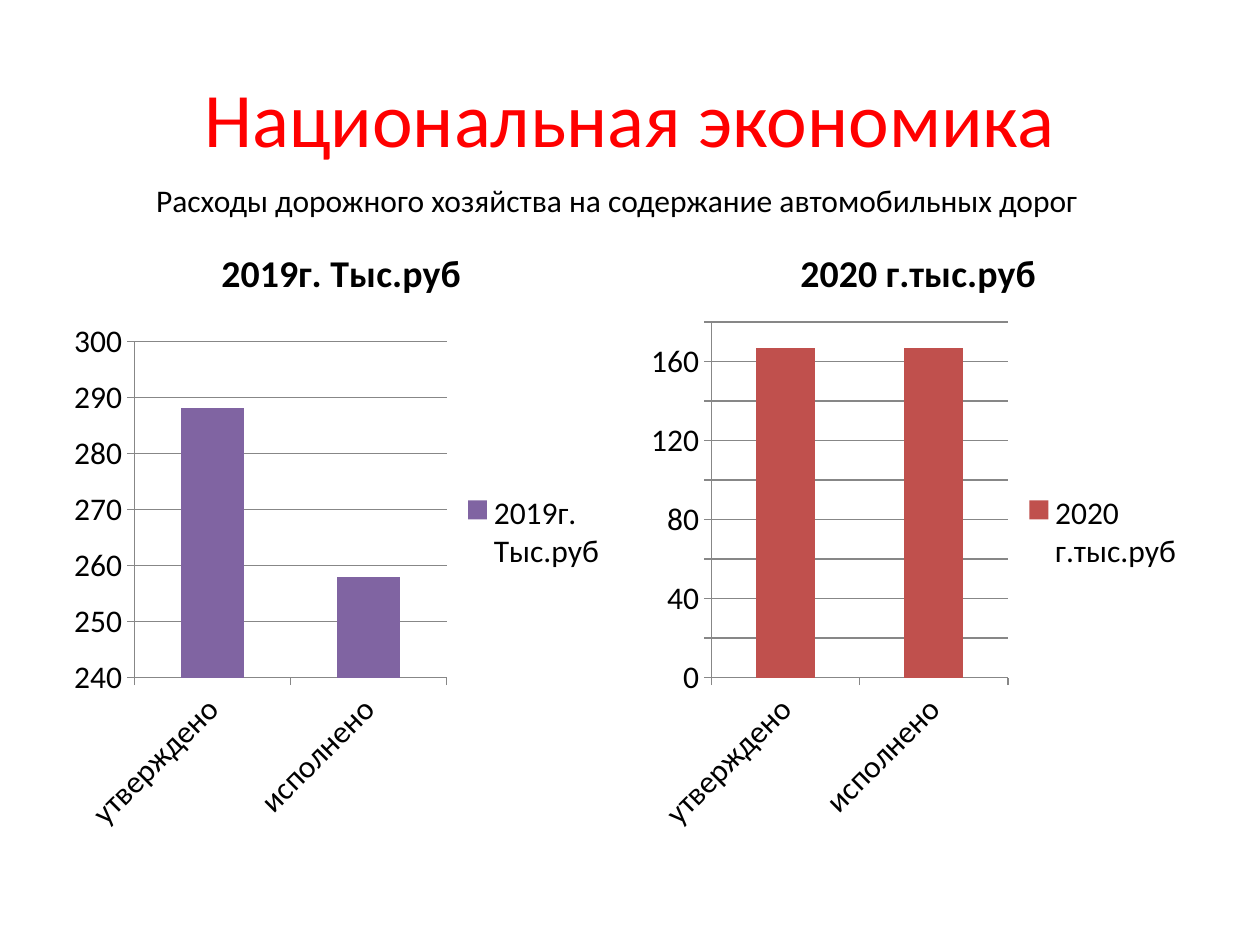
from dataclasses import dataclass

from pptx import Presentation
from pptx.chart.data import CategoryChartData
from pptx.dml.color import RGBColor
from pptx.enum.chart import XL_CHART_TYPE, XL_LEGEND_POSITION, XL_TICK_MARK
from pptx.enum.text import MSO_ANCHOR, MSO_AUTO_SIZE, PP_ALIGN
from pptx.util import Inches, Pt


@dataclass(frozen=True)
class Theme:
    font: str = "Calibri"
    title_size: float = 44
    body_size: float = 18
    chart_title_size: float = 21.6
    title_color: str = "FF0000"
    text_color: str = "000000"
    line_color: str = "878787"
    purple: str = "8064A2"
    red: str = "C0504D"


THEME = Theme()
CATEGORIES = ["утверждено", "исполнено"]
# Name, values, bar colour, then axis minimum, maximum and step
YEARS = [
    ("2019г. Тыс.руб", (288, 258), THEME.purple, (240, 300, 10)),
    ("2020 г.тыс.руб", (167, 167), THEME.red, (0, 180, 20)),
]


def place(shape, left, top, width, height):
    shape.left, shape.top = Inches(left), Inches(top)
    shape.width, shape.height = Inches(width), Inches(height)


def format_font(font, size, color, bold=False):
    font.name = THEME.font
    font.size = Pt(size)
    font.bold = bold
    font.color.rgb = RGBColor.from_string(color)


def write_text(text_frame, text, *, size=THEME.body_size, color=THEME.text_color,
               bold=False, align=PP_ALIGN.LEFT):
    paragraph = text_frame.paragraphs[0]
    paragraph.alignment = align
    run = paragraph.add_run()
    run.text = text
    format_font(run.font, size, color, bold)


def add_heading(slide, left, top, width, height):
    title = slide.shapes.title
    place(title, left, top, width, height)
    title.text_frame.vertical_anchor = MSO_ANCHOR.MIDDLE
    write_text(title.text_frame, "Национальная экономика", size=THEME.title_size,
               color=THEME.title_color, align=PP_ALIGN.CENTER)


def add_subtitle(slide, left, top, width, height):
    box = slide.shapes.add_textbox(Inches(left), Inches(top), Inches(width), Inches(height))
    box.text_frame.word_wrap = False
    box.text_frame.auto_size = MSO_AUTO_SIZE.SHAPE_TO_FIT_TEXT
    write_text(box.text_frame, "Расходы дорожного хозяйства на содержание автомобильных дорог")


def format_axis(axis):
    axis.major_tick_mark = XL_TICK_MARK.OUTSIDE
    axis.minor_tick_mark = XL_TICK_MARK.NONE
    axis.format.line.color.rgb = RGBColor.from_string(THEME.line_color)
    axis.format.line.width = Pt(0.75)


def add_year_chart(slide, left, top, width, height, name, values, color, scale):
    chart_data = CategoryChartData()
    chart_data.categories = CATEGORIES
    chart_data.add_series(name, values)
    chart = slide.shapes.add_chart(
        XL_CHART_TYPE.COLUMN_STACKED, Inches(left), Inches(top),
        Inches(width), Inches(height), chart_data).chart
    format_font(chart.font, THEME.body_size, THEME.text_color)

    chart.has_title = True
    write_text(chart.chart_title.text_frame, name, size=THEME.chart_title_size,
               bold=True, align=PP_ALIGN.CENTER)
    chart.chart_title.include_in_layout = False
    chart.has_legend = True
    chart.legend.position = XL_LEGEND_POSITION.RIGHT
    chart.legend.include_in_layout = False

    plot = chart.plots[0]
    plot.gap_width, plot.overlap = 150, 100
    plot.vary_by_categories = False
    fill = plot.series[0].format.fill
    fill.solid()
    fill.fore_color.rgb = RGBColor.from_string(color)

    format_axis(chart.category_axis)
    axis = chart.value_axis
    format_axis(axis)
    axis.minimum_scale, axis.maximum_scale, axis.major_unit = scale
    axis.has_major_gridlines = True
    gridline = axis.major_gridlines.format.line
    gridline.color.rgb = RGBColor.from_string(THEME.line_color)
    gridline.width = Pt(0.75)


def add_year_charts(slide, left, top, width, height, gap=0.16):
    chart_width = (width - gap * (len(YEARS) - 1)) / len(YEARS)
    for index, year in enumerate(YEARS):
        add_year_chart(slide, left + index * (chart_width + gap), top,
                       chart_width, height, *year)


def main():
    presentation = Presentation()
    presentation.slide_width, presentation.slide_height = Inches(10), Inches(7.5)
    slide = presentation.slides.add_slide(presentation.slide_layouts.get_by_name("Title Only"))
    add_heading(slide, 0.5, 0.3, 9, 1.25)
    add_year_charts(slide, 0.5, 1.75, 9, 4.95)
    add_subtitle(slide, 1.14, 1.39, 7.88, 0.4)
    presentation.save("out.pptx")


if __name__ == "__main__":
    main()
